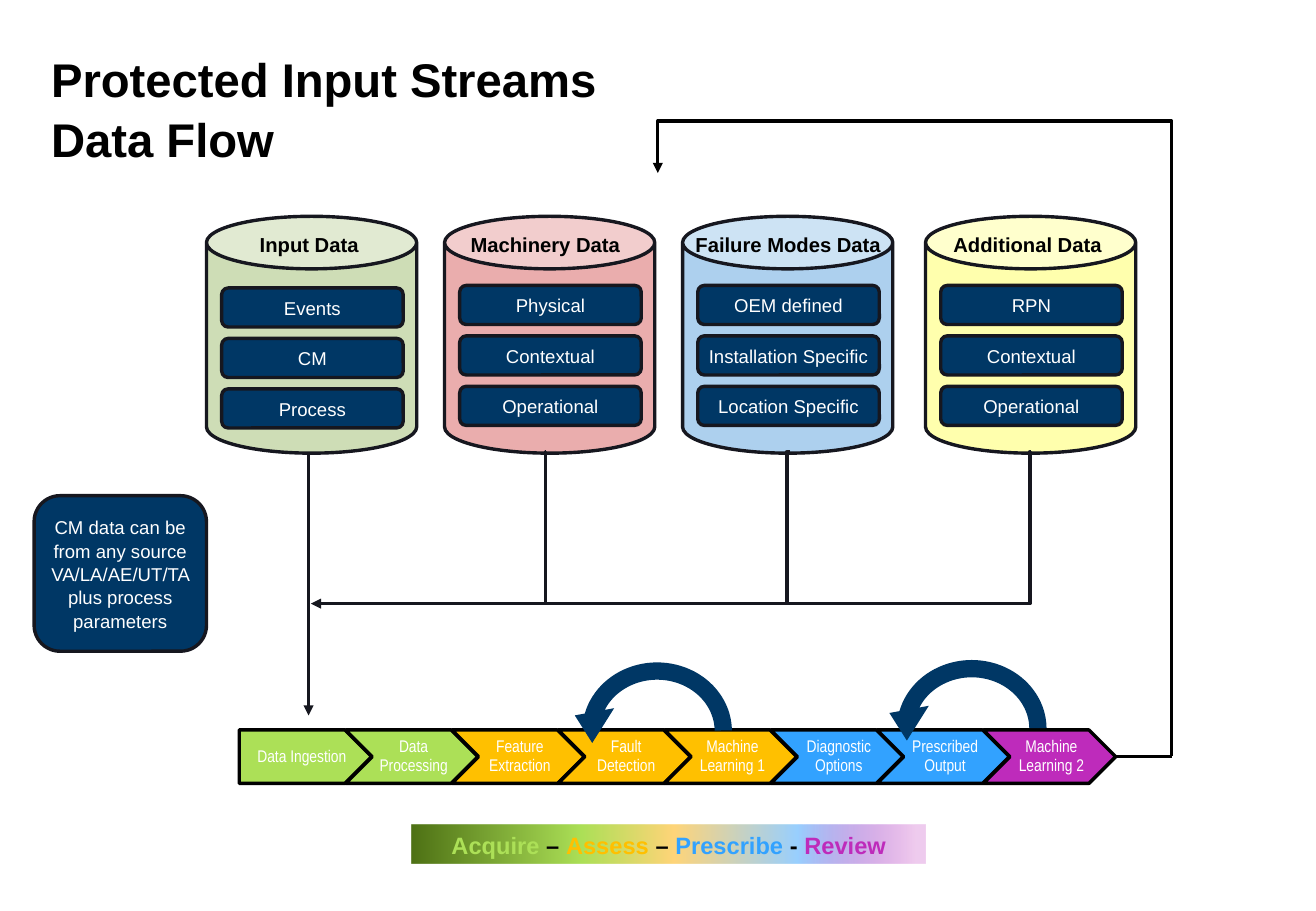
"""Builds the slide on the data flow of protected input streams."""
from dataclasses import dataclass

from lxml import etree
from pptx import Presentation
from pptx import util as u
from pptx.dml.color import RGBColor
from pptx.enum import shapes, text
from pptx.oxml.ns import qn

KIND = shapes.MSO_SHAPE
LINK = shapes.MSO_CONNECTOR


@dataclass(frozen=True)
class Theme:
    """Colours, fonts and type sizes of the slide."""
    navy: str = "003765"
    outline: str = "16171F"
    black: str = "000000"
    white: str = "FFFFFF"
    acquire: str = "ACE057"
    assess: str = "FFC000"
    prescribe: str = "32A2FF"
    review: str = "BE2BBB"
    banner_stops: tuple = ((0, "4E7115", 100), (33, "ACE057", 100), (51, "FFD579", 100),
                           (75, "99D0FF", 100), (98, "BE2BBB", 24))
    body_font: str = "Arial"
    step_font: str = "Arial Narrow"
    title_size: int = 28
    banner_size: int = 14
    heading_size: int = 12
    body_size: int = 11
    step_size: int = 10
    stroke: int = 2
    leading: float = 1.05
    step_leading: float = 0.9
    margins: tuple = (2.9, 2.9, 2.9, 2.9)
    step_margins: tuple = (2.9, 2.2, 0.7, 2.2)


class Board:
    """Draws each kind of element on the current slide in one style."""

    def __init__(self, slide, theme):
        self.slide, self.theme = slide, theme

    def shape(self, kind, box, fill=None, line=None, alpha=100):
        """Add a preset shape without shadow."""
        item = self.slide.shapes.add_shape(kind, *map(u.Pt, box))
        item.shadow.inherit = False
        if fill:
            item.fill.solid()
            item.fill.fore_color.rgb = RGBColor.from_string(fill)
            if alpha < 100:
                colour = item._element.spPr.find(qn("a:solidFill"))[0]
                etree.SubElement(colour, qn("a:alpha"), val=str(alpha * 1000))
        if line:
            self.stroke(item, line)
        else:
            item.line.fill.background()
        return item

    def stroke(self, item, colour):
        """Give an item the common line width in a colour."""
        item.line.color.rgb = RGBColor.from_string(colour)
        item.line.width = u.Pt(self.theme.stroke)

    def label(self, item, runs, size, bold=False, centred=True, middle=True,
              font=None, leading=None, margins=None):
        """Set (words, colour) runs as the one paragraph of an item."""
        frame = item.text_frame
        frame.word_wrap = True
        frame.vertical_anchor = text.MSO_ANCHOR.MIDDLE if middle else text.MSO_ANCHOR.TOP
        (frame.margin_left, frame.margin_top, frame.margin_right,
         frame.margin_bottom) = map(u.Pt, margins or self.theme.margins)
        line = frame.paragraphs[0]
        line.alignment = text.PP_ALIGN.CENTER if centred else text.PP_ALIGN.LEFT
        line.line_spacing = leading or self.theme.leading
        for words, colour in runs:
            run = line.add_run()
            run.text = words
            run.font.name = font or self.theme.body_font
            run.font.size = u.Pt(size)
            run.font.bold = bold
            run.font.color.rgb = RGBColor.from_string(colour)

    def heading(self, words, box, size, centred=True):
        """Add a bold black text box."""
        item = self.slide.shapes.add_textbox(*map(u.Pt, box))
        self.label(item, [(words, self.theme.black)], size, True, centred, False)

    def pill(self, words, box):
        """Add a navy rounded box with white text."""
        item = self.shape(KIND.ROUNDED_RECTANGLE, box, self.theme.navy, self.theme.outline)
        self.label(item, [(words, self.theme.white)], self.theme.body_size)

    def step(self, words, kind, box, fill, margins):
        """Add one step of the process chain."""
        item = self.shape(kind, box, fill, self.theme.black)
        self.label(item, [(words, self.theme.white)], self.theme.step_size,
                   font=self.theme.step_font, leading=self.theme.step_leading,
                   margins=margins)

    def link(self, start, end, colour, arrow=False, bend=None, turn=0):
        """Add a straight line, or an elbow that bends at a share of its width."""
        kind = LINK.STRAIGHT if bend is None else LINK.ELBOW
        item = self.slide.shapes.add_connector(kind, *map(u.Pt, start + end))
        self.stroke(item, colour)
        props = item._element.spPr
        if bend is not None:
            guides = props.find(qn("a:prstGeom")).get_or_add_avLst()
            etree.SubElement(guides, qn("a:gd"), name="adj1", fmla=f"val {round(bend * 100000)}")
        if turn:
            props.find(qn("a:xfrm")).set("rot", str(turn * 60000))
        if arrow:
            etree.SubElement(props.find(qn("a:ln")), qn("a:tailEnd"), type="triangle")
        etree.SubElement(props, qn("a:effectLst"))

    def loop(self, box):
        """Add a circular arrow that points back along the chain."""
        item = self.shape(KIND.CIRCULAR_ARROW, box, self.theme.navy)
        for index, value in enumerate((0.108, 16.503, 205.688, 108.353, 0.125)):
            item.adjustments[index] = value
        item._element.spPr.find(qn("a:xfrm")).set("flipH", "1")

    def banner(self, runs, box):
        """Add the gradient bar with its coloured words."""
        item = self.shape(KIND.RECTANGLE, box)
        item.fill.gradient()
        item.fill.gradient_angle = 0
        stops = item._element.spPr.find(".//" + qn("a:gsLst"))
        for stop in list(stops):
            stops.remove(stop)
        for place, colour, alpha in self.theme.banner_stops:
            stop = etree.SubElement(stops, qn("a:gs"), pos=str(place * 1000))
            tint = etree.SubElement(stop, qn("a:srgbClr"), val=colour)
            if alpha < 100:
                etree.SubElement(tint, qn("a:alpha"), val=str(alpha * 1000))
        self.label(item, runs, self.theme.banner_size, bold=True, middle=False)


STORES = (
    ("Input Data", 122.4, "68971C", 131.8, 103, 170.7, ("Events", "CM", "Process")),
    ("Machinery Data", 263.5, "C00000", 270.7, 105.1, 169.2,
     ("Physical", "Contextual", "Operational")),
    ("Failure Modes Data", 404.6, "006FCB", 403.9, 126.7, 169.2,
     ("OEM defined", "Installation Specific", "Location Specific")),
    ("Additional Data", 548.6, "FFFF00", 554.4, 109.4, 169.2,
     ("RPN", "Contextual", "Operational")),
)


def main():
    """Draw the slide and save it."""
    deck = Presentation()
    deck.slide_width, deck.slide_height = u.Pt(780), u.Pt(540)
    theme = Theme()
    board = Board(deck.slides.add_slide(deck.slide_layouts[6]), theme)

    board.heading("Protected Input Streams Data Flow", (27.4, 25.3, 334.8, 73.4),
                  theme.title_size, centred=False)
    for name, left, tint, name_left, name_width, top, contents in STORES:
        board.shape(KIND.CAN, (left, 128.2, 124.6, 140.4), tint, theme.outline, 32)
        board.heading(name, (name_left, 133.9, name_width, 20.2), theme.heading_size)
        for row, words in enumerate(contents):
            board.pill(words, (left + 9, top + 29.9 * row, 107.6, 23.2))

    chain = (("Data Ingestion", theme.acquire), ("Data Processing", theme.acquire),
             ("Feature Extraction", theme.assess), ("Fault Detection", theme.assess),
             ("Machine Learning 1", theme.assess), ("Diagnostic Options", theme.prescribe),
             ("Prescribed Output", theme.prescribe), ("Machine Learning 2", theme.review))
    for index, (words, fill) in enumerate(chain):
        kind = KIND.CHEVRON if index else KIND.PENTAGON
        margins = theme.step_margins if index else (4.3, 2.2, 0.7, 2.2)
        board.step(words, kind, (141.8 + 63 * index, 432.7, 78.5, 31.7), fill, margins)

    board.link((182.9, 268.6), (182.9, 424.1), theme.outline, arrow=True)
    board.link((323.3, 267.8), (184.3, 357.8), theme.outline, arrow=True, bend=0.001)
    board.link((468, 267.8), (311, 357.8), theme.outline, bend=0.01)
    board.link((610.6, 267.8), (454.3, 357.8), theme.outline, bend=0.001)
    board.link((369.4, 427.7), (715, 123.1), theme.black, arrow=True, bend=1.089, turn=270)
    board.link((661.7, 448.6), (694.8, 448.6), theme.black)

    board.banner([("Acquire", theme.acquire), (" – ", theme.black), ("Assess", theme.assess),
                  (" – ", theme.black), ("Prescribe", theme.prescribe), (" - ", theme.black),
                  ("Review", theme.review)], (244.1, 488.9, 304.6, 23))
    board.loop((524.9, 384.5, 102.2, 95))
    board.loop((338.4, 385.9, 102.2, 95))
    board.pill("CM data can be from any source VA/LA/AE/UT/TA plus process parameters",
               (20.2, 293.8, 102.2, 92.2))
    deck.save("out.pptx")


if __name__ == "__main__":
    main()
